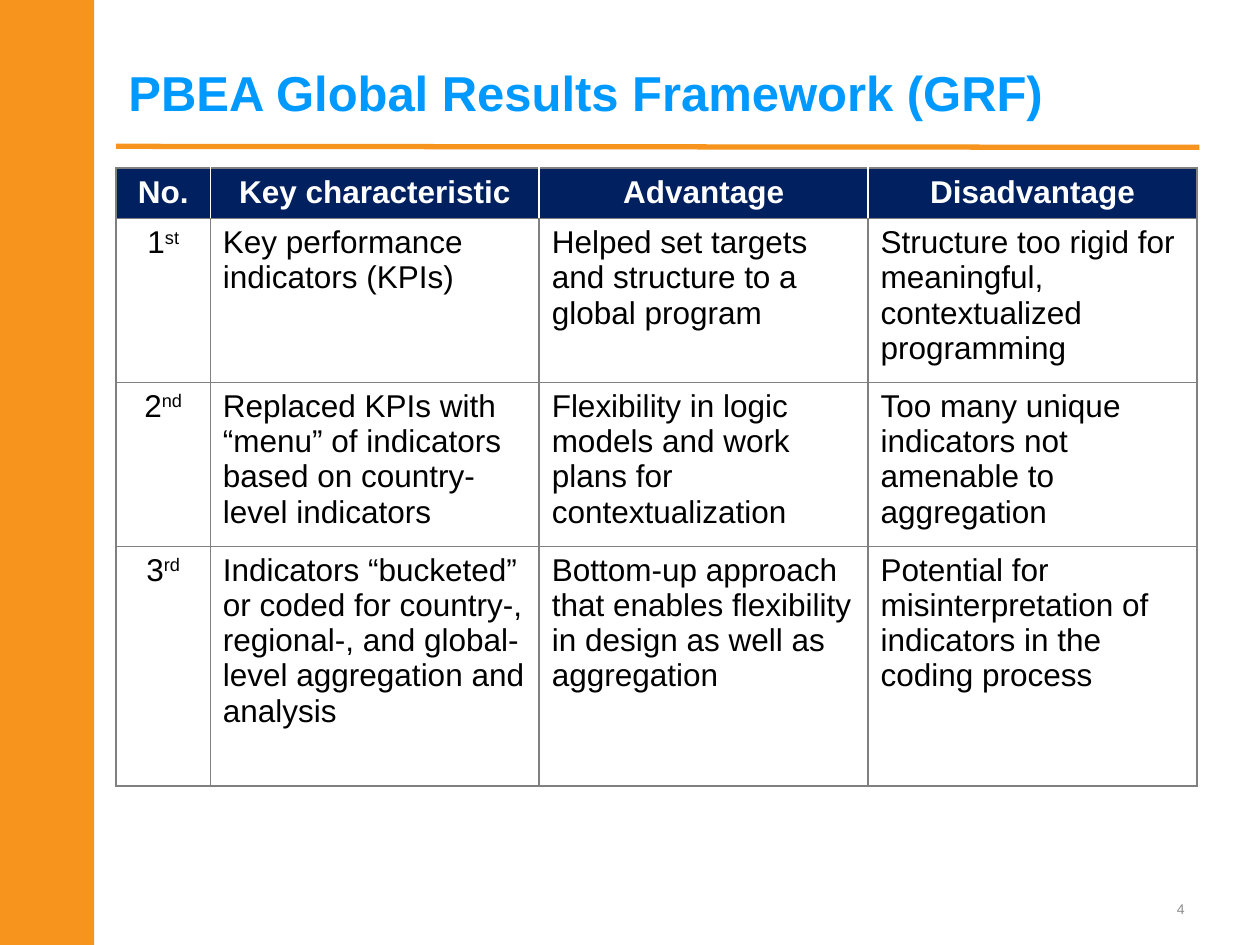
import pptx
import pptx.dml.color
import pptx.enum.shapes
import pptx.enum.text
import pptx.oxml
import pptx.oxml.ns
import pptx.util
from pptx.util import Cm

ALIGN = pptx.enum.text.PP_ALIGN
ORANGE, BLUE, NAVY = "F7941D", "0099FF", "002060"
WHITE, BLACK, GREY, PALE_GREY = "FFFFFF", "000000", "808080", "8C8C8C"

LEFT = Cm(2.34)
COLUMN_WIDTHS = [1.9, 6.63, 6.63, 6.63]
ROW_HEIGHTS = [0.97, 3.1, 3.1, 4.83]
HEADINGS = ["No.", "Key characteristic", "Advantage", "Disadvantage"]
GENERATIONS = [
    (("1", "st"),
     "Key performance indicators (KPIs)",
     "Helped set targets and structure to a global program",
     "Structure too rigid for meaningful, contextualized programming"),
    (("2", "nd"),
     "Replaced KPIs with “menu” of indicators based on country-level indicators",
     "Flexibility in logic models and work plans for contextualization",
     "Too many unique indicators not amenable to aggregation"),
    (("3", "rd"),
     "Indicators “bucketed” or coded for country-, regional-, and global-level "
     "aggregation and analysis",
     "Bottom-up approach that enables flexibility in design as well as aggregation",
     "Potential for misinterpretation of indicators in the coding process"),
]


def rgb(value):
    return pptx.dml.color.RGBColor.from_string(value)


def format_para(para, size, color, bold=False, align=ALIGN.LEFT):
    para.alignment = align
    for span in para.runs:
        span.font.name = "Arial"
        span.font.size = pptx.util.Pt(size)
        span.font.bold = bold
        span.font.color.rgb = rgb(color)


def add_text(page, left, top, width, height, text, size, color, **style):
    frame = page.shapes.add_textbox(left, top, width, height).text_frame
    frame.word_wrap = True
    frame.vertical_anchor = pptx.enum.text.MSO_ANCHOR.MIDDLE
    frame.text = text
    format_para(frame.paragraphs[0], size, color, **style)


def add_side_band(page, width, height):
    band = page.shapes.add_shape(
        pptx.enum.shapes.MSO_SHAPE.RECTANGLE, 0, 0, width, height)
    band.shadow.inherit = False
    band.fill.solid()
    band.fill.fore_color.rgb = rgb(ORANGE)
    band.line.fill.background()


def add_rule(page, x1, y1, x2, y2):
    rule = page.shapes.add_connector(
        pptx.enum.shapes.MSO_CONNECTOR.STRAIGHT, x1, y1, x2, y2)
    rule.line.color.rgb = rgb(ORANGE)
    rule.line.width = pptx.util.Pt(3)
    rule._element.spPr.append(pptx.oxml.parse_xml(
        f'<a:effectLst {pptx.oxml.ns.nsdecls("a")}/>'))


def set_borders(cell, **colors):
    """Draw 1 pt borders; sides must come in the order L, R, T, B."""
    properties = cell._tc.get_or_add_tcPr()
    for side, color in colors.items():
        properties.append(pptx.oxml.parse_xml(
            f'<a:ln{side} {pptx.oxml.ns.nsdecls("a")} w="12700"><a:solidFill>'
            f'<a:srgbClr val="{color}"/></a:solidFill></a:ln{side}>'))


def fill_heading(cell, text, is_first, is_last):
    set_borders(cell, L=GREY if is_first else WHITE,
                R=GREY if is_last else WHITE, T=GREY, B=GREY)
    cell.fill.solid()
    cell.fill.fore_color.rgb = rgb(NAVY)
    cell.text_frame.text = text
    format_para(cell.text_frame.paragraphs[0], 18, WHITE, True, ALIGN.CENTER)


def fill_body(cell, content):
    """Write a plain text, or a (number, raised suffix) pair, into a cell."""
    set_borders(cell, L=GREY, R=GREY, T=GREY, B=GREY)
    cell.fill.background()
    para = cell.text_frame.paragraphs[0]
    if isinstance(content, str):
        para.text = content
        format_para(para, 18, BLACK)
        return
    number, suffix = content
    para.text = number
    raised = para.add_run()
    raised.text = suffix
    format_para(para, 18, BLACK, align=ALIGN.CENTER)
    raised.font._element.set("baseline", "30000")


def add_framework_table(page, left, top):
    table = page.shapes.add_table(
        len(ROW_HEIGHTS), len(COLUMN_WIDTHS), left, top,
        Cm(sum(COLUMN_WIDTHS)), Cm(sum(ROW_HEIGHTS))).table
    table.horz_banding = False
    for column, width in zip(table.columns, COLUMN_WIDTHS):
        column.width = Cm(width)
    for row, height in zip(table.rows, ROW_HEIGHTS):
        row.height = Cm(height)
    last = len(HEADINGS) - 1
    for c, heading in enumerate(HEADINGS):
        fill_heading(table.cell(0, c), heading, c == 0, c == last)
    for r, generation in enumerate(GENERATIONS, start=1):
        for c, content in enumerate(generation):
            fill_body(table.cell(r, c), content)


def main():
    deck = pptx.Presentation()
    deck.slide_width, deck.slide_height = Cm(25.4), Cm(19.05)
    page = deck.slides.add_slide(deck.slide_layouts[6])
    add_side_band(page, Cm(1.9), deck.slide_height)
    add_rule(page, LEFT, Cm(2.95), Cm(24.18), Cm(2.97))
    add_text(page, LEFT, Cm(0.76), Cm(21.79), Cm(2.2),
             "PBEA Global Results Framework (GRF)", 28, BLUE, bold=True)
    add_framework_table(page, LEFT, Cm(3.39))
    add_text(page, Cm(18.21), Cm(17.98), Cm(5.92), Cm(0.69),
             "4", 8, PALE_GREY, align=ALIGN.RIGHT)
    deck.save("out.pptx")


if __name__ == "__main__":
    main()
